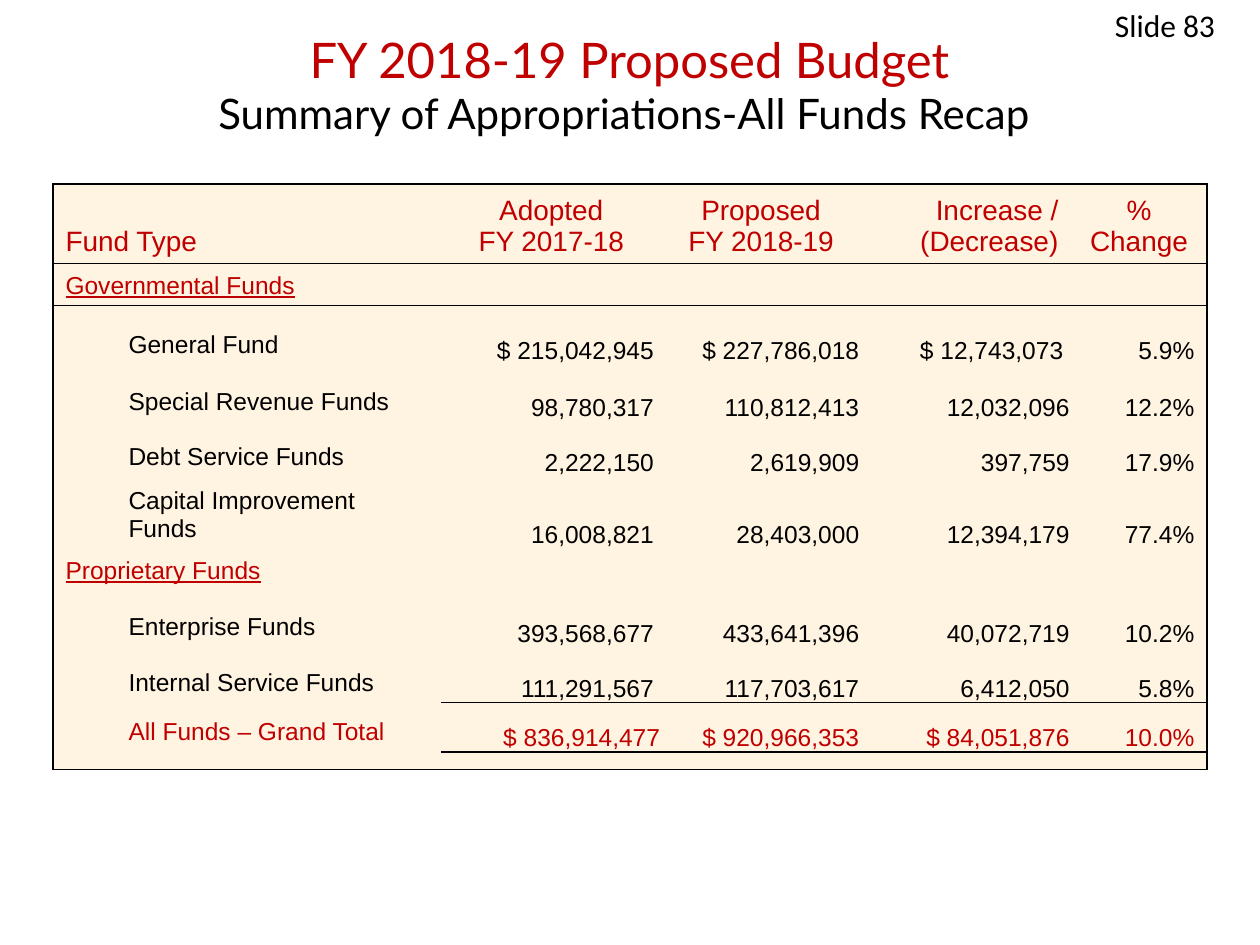
from lxml.etree import SubElement
from pptx import Presentation
from pptx.dml.color import RGBColor
from pptx.enum.text import MSO_ANCHOR as Anchor, PP_ALIGN as Align
from pptx.oxml.ns import qn
from pptx.util import Inches, Pt

RED = RGBColor(0xC0, 0x00, 0x00)
BLACK = RGBColor(0x00, 0x00, 0x00)
CREAM = RGBColor(0xFF, 0xF3, 0xE1)
NO_STYLE = "{2D5ABB26-0587-4C30-8999-92F81FD0307C}"

HEADING = {"name": "Lato", "size": Pt(28)}
SUBHEADING = {"name": "Lato", "size": Pt(24)}
PAGE_LABEL = {"name": "Calibri", "size": Pt(18)}
COLUMN_HEAD = {"name": "Arial", "size": Pt(16)}
GROUP = {"name": "Arial", "size": Pt(14), "underline": True}
BODY = {"name": "Arial", "size": Pt(14)}


def write(paragraph, text, style, color):
    run = paragraph.add_run()
    run.text = text
    for attribute, value in style.items():
        setattr(run.font, attribute, value)
    run.font.color.rgb = color


def add_border(cell, side, points):
    line = SubElement(cell._tc.get_or_add_tcPr(), qn(f"a:ln{side}"), w=str(Pt(points)))
    fill = SubElement(line, qn("a:solidFill"))
    SubElement(fill, qn("a:srgbClr"), val=str(BLACK))


deck = Presentation()
deck.slide_width, deck.slide_height = Inches(10), Inches(7.5)
slide = deck.slides.add_slide(deck.slide_layouts[6])

title = slide.shapes.add_textbox(Inches(0.33), Inches(0.33), Inches(9.33), Inches(0.67)).text_frame
title.word_wrap = True
title.vertical_anchor = Anchor.MIDDLE
headline = title.paragraphs[0]
headline.alignment = Align.CENTER
write(headline, "FY 2018-19 Proposed Budget", HEADING, RED)
headline.add_line_break()
write(headline, "Summary of Appropriations-All Funds Recap ", SUBHEADING, BLACK)

column_heads = [
    ("Fund Type", Align.LEFT),
    None,
    ("Adopted\nFY 2017-18", Align.CENTER),
    ("Proposed\nFY 2018-19", Align.CENTER),
    ("Increase / (Decrease)", Align.RIGHT),
    ("%\nChange", Align.CENTER),
]
funds = [
    ("Governmental Funds",),
    ("General Fund", "$ 215,042,945", "$ 227,786,018", "$ 12,743,073", "5.9%"),
    ("Special Revenue Funds", "98,780,317", "110,812,413", "12,032,096", "12.2%"),
    ("Debt Service Funds", "2,222,150", "2,619,909", "397,759", "17.9%"),
    ("Capital Improvement Funds", "16,008,821", "28,403,000", "12,394,179", "77.4%"),
    ("Proprietary Funds",),
    ("Enterprise Funds", "393,568,677", "433,641,396", "40,072,719", "10.2%"),
    ("Internal Service Funds", "111,291,567", "117,703,617", "6,412,050", "5.8%"),
    ("All Funds – Grand Total", "$ 836,914,477", "$ 920,966,353", "$ 84,051,876", "10.0%"),
]
column_widths = [0.5, 2.58, 1.75, 1.58, 1.67, 1.08]
row_heights = [0.6, 0.32, 0.47, 0.45, 0.44, 0.55, 0.32, 0.45, 0.44, 0.39, 0.14]
total_row = len(funds)
last_row = len(row_heights) - 1
last_column = len(column_widths) - 1

frame = slide.shapes.add_table(
    len(row_heights), len(column_widths), Inches(0.42), Inches(1.46),
    Inches(sum(column_widths)), Inches(sum(row_heights)))
budget = frame.table
budget.first_row = budget.horz_banding = False
budget._tbl.tblPr.find(qn("a:tableStyleId")).text = NO_STYLE
for column, width in zip(budget.columns, column_widths):
    column.width = Inches(width)
for row, height in zip(budget.rows, row_heights):
    row.height = Inches(height)

full_rules = {-1: 1, 0: 0.5, last_row: 1}
figure_rules = {**full_rules, total_row - 1: 0.5, total_row: 1}
for r in range(last_row + 1):
    for c in range(last_column + 1):
        cell = budget.cell(r, c)
        cell.vertical_anchor = Anchor.BOTTOM
        rules = figure_rules if c >= 2 else full_rules
        edges = {
            "L": 1 if c == 0 else None,
            "R": 1 if c == last_column else None,
            "T": rules.get(r - 1),
            "B": rules.get(r),
        }
        for side, points in edges.items():
            if points:
                add_border(cell, side, points)
        cell.fill.solid()
        cell.fill.fore_color.rgb = CREAM

for c, head in enumerate(column_heads):
    if head:
        text, alignment = head
        lines = budget.cell(0, c).text_frame
        for i, line in enumerate(text.split("\n")):
            paragraph = lines.add_paragraph() if i else lines.paragraphs[0]
            paragraph.alignment = alignment
            write(paragraph, line, COLUMN_HEAD, RED)
budget.cell(0, 0).merge(budget.cell(0, 1))

for r, (label, *figures) in enumerate(funds, 1):
    color = RED if r == total_row or not figures else BLACK
    label_cell = budget.cell(r, 1 if figures else 0)
    write(label_cell.text_frame.paragraphs[0], label, BODY if figures else GROUP, color)
    if not figures:
        label_cell.merge(budget.cell(r, 1))
    for c, figure in enumerate(figures, 2):
        cell = budget.cell(r, c)
        inset = 0.01
        if c == last_column:
            inset = 0.1
        elif (c == 2 and r != total_row) or (label == "General Fund" and c == 4):
            inset = 0.06
        cell.margin_left = cell.margin_top = Inches(0.01)
        cell.margin_right, cell.margin_bottom = Inches(inset), Inches(0)
        paragraph = cell.text_frame.paragraphs[0]
        paragraph.alignment = Align.RIGHT
        write(paragraph, figure, BODY, color)

for r in range(last_row + 1):
    for c in range(last_column + 1):
        cell = budget.cell(r, c)
        if not cell.text_frame.text:
            size = 4 if r == last_row else 14
            SubElement(cell.text_frame.paragraphs[0]._p, qn("a:endParaRPr"), sz=str(size * 100))
            if r == last_row:
                cell.margin_top = cell.margin_bottom = Inches(0.01)

page_label = slide.shapes.add_textbox(Inches(8.75), Inches(0), Inches(1.25), Inches(0.5)).text_frame
page_label.word_wrap = True
write(page_label.paragraphs[0], "Slide 83", PAGE_LABEL, BLACK)

deck.save("out.pptx")
